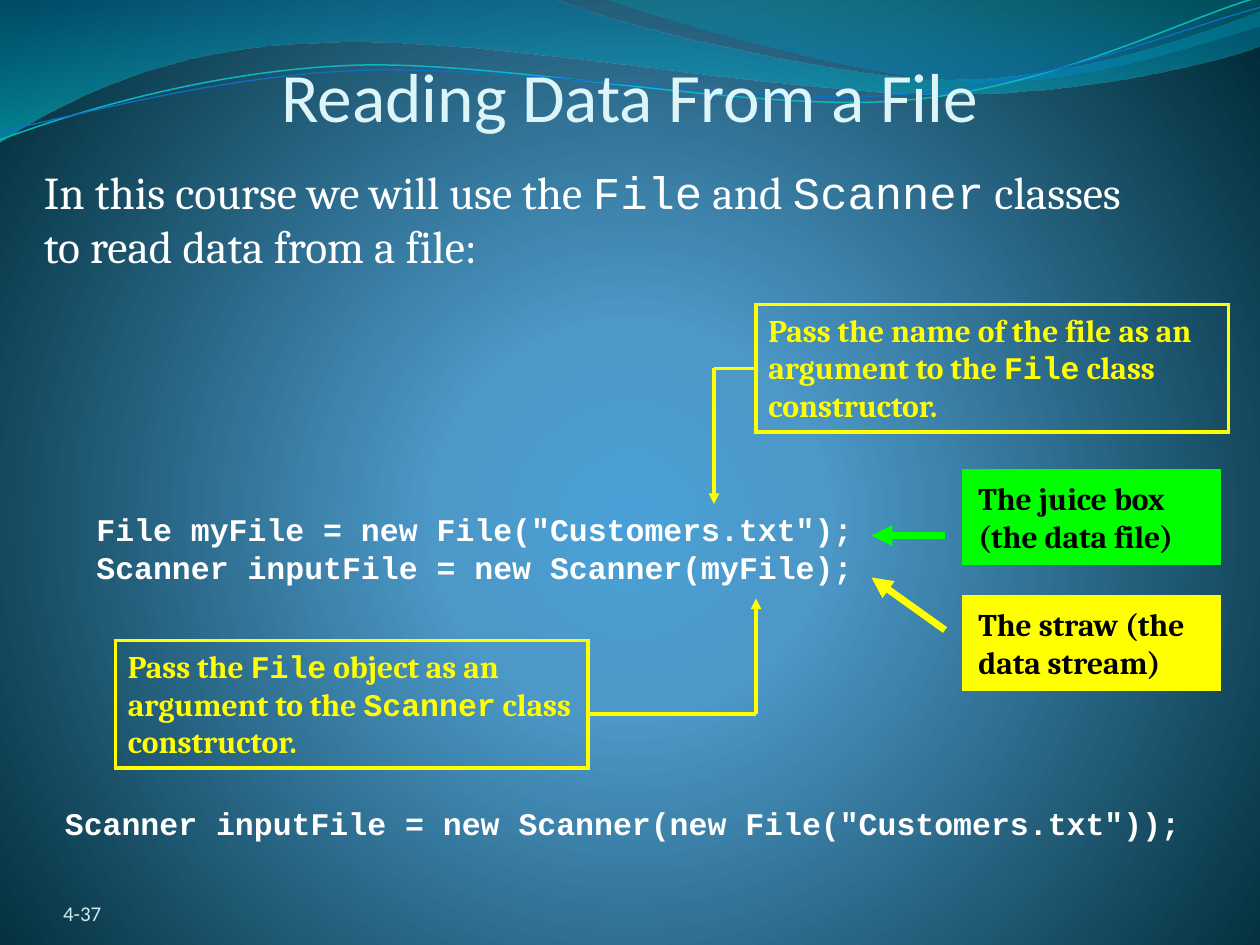
from math import cos, radians, sin

from lxml import etree
from pptx import Presentation
from pptx.dml.color import RGBColor
from pptx.enum.shapes import MSO_CONNECTOR, MSO_SHAPE
from pptx.enum.text import MSO_ANCHOR, PP_ALIGN
from pptx.oxml.ns import qn
from pptx.util import Pt

STRAIGHT = MSO_CONNECTOR.STRAIGHT
RECTANGLE = MSO_SHAPE.RECTANGLE
TOP, BOTTOM = MSO_ANCHOR.TOP, MSO_ANCHOR.BOTTOM
LEFT, CENTER = PP_ALIGN.LEFT, PP_ALIGN.CENTER
LEFT_SIDE = 1

SERIF, MONO, SANS = "Cambria", "Courier New", "Calibri"
WHITE, BLACK, YELLOW, GREEN = "FFFFFF", "000000", "FFFF00", "00FF00"
DEFAULT_INSETS = (7.2, 3.6, 7.2, 3.6)
CURVE_TILT = 2.7


def color(hex_string):
    """Return the colour for a hex string."""
    return RGBColor.from_string(hex_string)


def set_gradient(fill, owner, stops):
    """Give a fill its (position, colour, opacity) stops and return its element."""
    fill.gradient()
    gradient = next(owner.iter(qn("a:gradFill")))
    for child in list(gradient):
        gradient.remove(child)
    stop_list = etree.SubElement(gradient, qn("a:gsLst"))
    for position, hex_string, opacity in stops:
        stop = etree.SubElement(stop_list, qn("a:gs"), pos=str(position * 1000))
        tint = etree.SubElement(stop, qn("a:srgbClr"), val=hex_string)
        if opacity < 100:
            etree.SubElement(tint, qn("a:alpha"), val=str(opacity * 1000))
    return gradient


def paint_background(page):
    """Fill the page with a radial blue gradient."""
    stops = [(0, "4AA0D6", 100), (25, "4C98C7", 100), (100, "002C38", 100)]
    gradient = set_gradient(page.background.fill, page.element, stops)
    circle = etree.SubElement(gradient, qn("a:path"), path="circle")
    etree.SubElement(circle, qn("a:fillToRect"),
                     l="10000", t="110000", r="10000", b="100000")


def add_outline(page, start, segments, closed):
    """Add a freeform along straight (1 point) and cubic (3 points) segments."""
    builder = page.shapes.build_freeform(*[Pt(length) for length in start])
    points = [(Pt(x), Pt(y)) for segment in segments for x, y in segment]
    builder.add_line_segments(points, close=closed)
    outline = builder.convert_to_shape()
    outline.shadow.inherit = False
    steps = iter(list(outline.element.iter(qn("a:lnTo"))))
    for segment in segments:
        step = next(steps)
        if len(segment) == 3:
            step.tag = qn("a:cubicBezTo")
            for extra in (next(steps), next(steps)):
                step.append(extra[0])
                extra.getparent().remove(extra)
    return outline


def add_wave(page, start, segments, stops):
    """Add a closed wave with a translucent vertical gradient."""
    wave = add_outline(page, start, segments, True)
    wave.line.fill.background()
    gradient = set_gradient(wave.fill, wave.element, stops)
    etree.SubElement(gradient, qn("a:lin"), ang="5400000", scaled="0")


def add_curve(page, center, start, segments, hex_string, width):
    """Add an open curved line that is tilted about its center."""
    cosine, sine = cos(radians(CURVE_TILT)), sin(radians(CURVE_TILT))

    def level(point):
        """Return the point before the tilt."""
        x, y = point[0] - center[0], point[1] - center[1]
        return center[0] + x * cosine - y * sine, center[1] + x * sine + y * cosine

    leveled = [[level(point) for point in segment] for segment in segments]
    curve = add_outline(page, level(start), leveled, False)
    curve.rotation = -CURVE_TILT
    curve.fill.background()
    curve.line.color.rgb = color(hex_string)
    curve.line.width = Pt(width)


def write(box, lines, size, hex_string, bold=False, align=LEFT, anchor=TOP,
          insets=DEFAULT_INSETS):
    """Write lines, each a list of (text, font) spans, into a box."""
    frame = box.text_frame
    frame.word_wrap = True
    frame.vertical_anchor = anchor
    (frame.margin_left, frame.margin_top,
     frame.margin_right, frame.margin_bottom) = [Pt(inset) for inset in insets]
    for index, spans in enumerate(lines):
        para = frame.add_paragraph() if index else frame.paragraphs[0]
        para.alignment = align
        for text, font in spans:
            span = para.add_run()
            span.text = text
            span.font.name = font
            span.font.size = Pt(size)
            span.font.bold = bold
            span.font.color.rgb = color(hex_string)


def add_text(page, place, lines, size, hex_string, **style):
    """Add a text box."""
    box = page.shapes.add_textbox(*[Pt(length) for length in place])
    write(box, lines, size, hex_string, **style)


def add_note(page, place, spans, line_color, line_width, text_color, fill_color=None):
    """Add a sharp-cornered rectangle holding a bold note."""
    box = page.shapes.add_shape(RECTANGLE, *[Pt(length) for length in place])
    box.shadow.inherit = False
    if fill_color:
        box.fill.solid()
        box.fill.fore_color.rgb = color(fill_color)
    else:
        box.fill.background()
    box.line.color.rgb = color(line_color)
    box.line.width = Pt(line_width)
    etree.SubElement(box.line._get_or_add_ln(), qn("a:miter"), lim="800000")
    write(box, [spans], 18, text_color, bold=True)
    return box


def add_line(page, start, end, hex_string, width, arrow=False):
    """Add a straight connector, with an arrowhead at its end if asked."""
    line = page.shapes.add_connector(STRAIGHT, *[Pt(length) for length in start + end])
    line.line.color.rgb = color(hex_string)
    line.line.width = Pt(width)
    if arrow:
        etree.SubElement(line.line._get_or_add_ln(), qn("a:tailEnd"), type="triangle")
    etree.SubElement(line.element.spPr, qn("a:effectLst"))
    return line


def add_bent_arrow(page, start, corner, end):
    """Add a yellow arrow of two straight parts and return the first part."""
    first = add_line(page, start, corner, YELLOW, 2)
    add_line(page, corner, end, YELLOW, 2, arrow=True)
    return first


def add_decoration(page):
    """Add the waves and curved lines along the top."""
    add_wave(page, (0, 0), [
        [(316.8, -0.7)], [(342.7, 12.2), (478.1, 45.4), (545.8, 45.4)],
        [(614.2, 45.4), (689.8, 18.7), (720, 6.5)], [(720.7, 25.9)],
        [(707.8, 31.7), (626.4, 54.7), (537.1, 54)],
        [(447.8, 54), (275, 20.2), (185, 24.5)],
        [(92.9, 25.9), (33.1, 59.8), (-0.7, 81.4)], [(0, 0)],
    ], [(0, "0074A1", 45), (100, "00C6CF", 55)])
    add_wave(page, (344.9, -0.7), [
        [(366.5, 7.9), (491, 44.6), (553.7, 46.8)],
        [(616.3, 49.7), (691.9, 23), (720, 15.1)], [(720, 0)], [(344.9, -0.7)],
    ], [(0, "00A1A9", 30), (80, "008BBF", 45)])
    add_curve(page, (359.3, 41.4), (0, 79.9), [
        [(34.6, 67), (113.8, 41), (199.4, 37.4)],
        [(284.4, 33.8), (427, 64.1), (513.4, 57.6)],
        [(599.8, 51.1), (675.4, 10.8), (718.6, -1.4)],
    ], "0AB8BF", 0.85)
    add_curve(page, (359.6, 42.5), (0, 74.9), [
        [(33.8, 69.1), (118.1, 43.9), (203.8, 40.3)],
        [(290.2, 36.7), (429.8, 60.5), (516.2, 54)],
        [(601.9, 48.2), (677.5, 15.1), (720, 4.3)],
    ], "0F6FC6", 0.75)


def main():
    """Build the slide and save it."""
    deck = Presentation()
    deck.slide_width, deck.slide_height = Pt(720), Pt(540)
    page = deck.slides.add_slide(deck.slide_layouts[6])
    paint_background(page)
    add_decoration(page)

    add_text(page, (36, 500.4, 168, 28.8), [[("4-37", SANS)]], 12, "D1EAEE",
             anchor=BOTTOM, insets=(0, 0, 0, 0))
    add_text(page, (36, 30, 648, 48), [[("Reading Data From a File", SANS)]], 39.6,
             "DBF5F9", align=CENTER, anchor=BOTTOM, insets=(0, 3.6, 0, 0))
    add_text(page, (18, 90, 654, 120), [[
        ("In this course we will use the ", SERIF), ("File", MONO), (" and ", SERIF),
        ("Scanner", MONO), (" classes to read data from a file:", SERIF)]], 26, WHITE)
    add_text(page, (48, 288, 450, 51), [
        [('File myFile = new File("Customers.txt");', MONO)],
        [("Scanner inputFile = new Scanner(myFile);", MONO)]], 18, WHITE, bold=True)

    file_note = add_note(page, (432, 174, 270, 73), [
        ("Pass the name of the file as an argument to the ", SERIF), ("File", MONO),
        (" class constructor.", SERIF)], YELLOW, 2, YELLOW)
    stem = add_bent_arrow(page, (432, 210.5), (408, 210.5), (408, 288))
    stem.begin_connect(file_note, LEFT_SIDE)

    add_note(page, (66, 366, 270, 73), [
        ("Pass the ", SERIF), ("File", MONO), (" object as an argument to the ", SERIF),
        ("Scanner", MONO), (" class constructor.", SERIF)], YELLOW, 2, YELLOW)
    add_bent_arrow(page, (336, 408), (432, 408), (432, 342))

    for top, text, tint, start, end in (
            (270, "The juice box (the data file)", GREEN, (540, 306), (498, 306)),
            (342, "The straw (the data stream)", YELLOW, (540, 360), (498, 330))):
        add_note(page, (552, top, 144, 51), [(text, SERIF)], tint, 4, BLACK, tint)
        add_line(page, start, end, tint, 4, arrow=True)

    add_text(page, (30, 456, 666, 29), [
        [('Scanner inputFile = new Scanner(new File("Customers.txt"));', MONO)]],
        18, WHITE, bold=True)
    deck.save("out.pptx")


if __name__ == "__main__":
    main()
